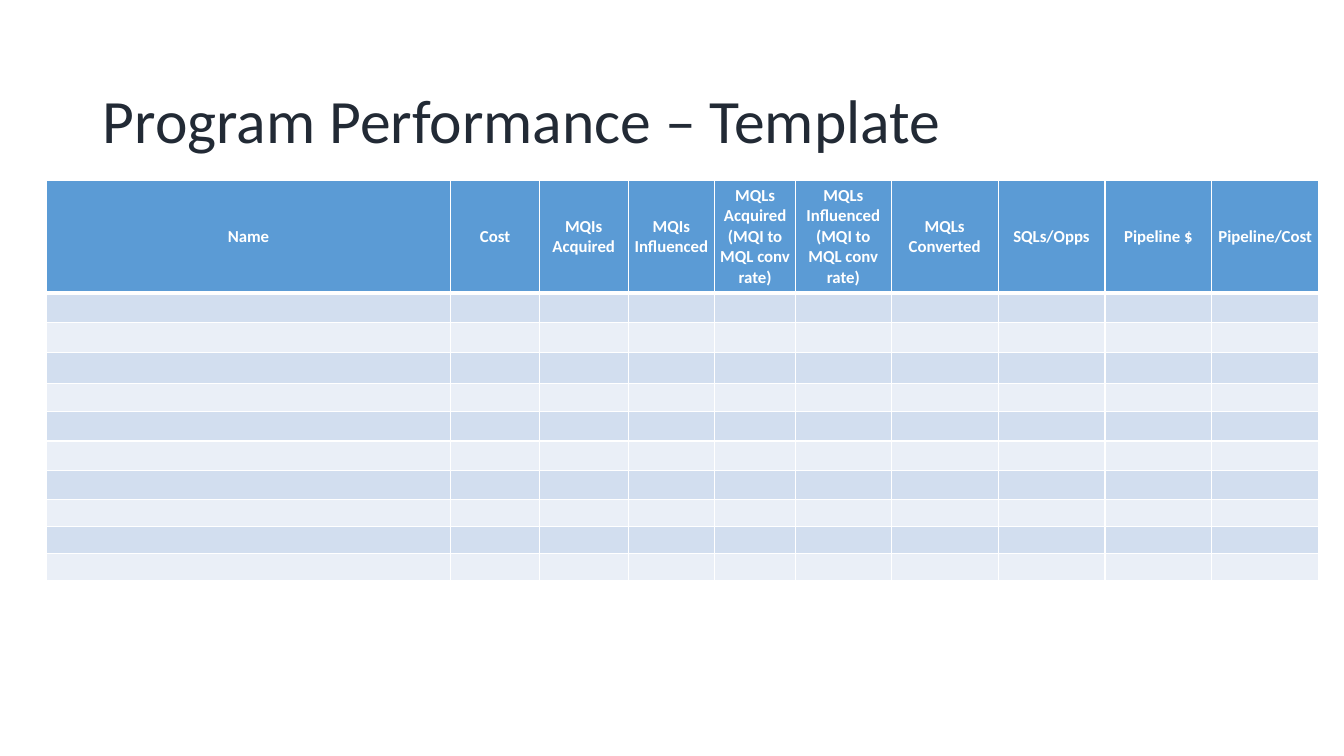
from lxml.etree import SubElement
from pptx import Presentation
from pptx.dml.color import RGBColor
from pptx.enum.text import MSO_ANCHOR as Anchor, MSO_AUTO_SIZE as Fit, PP_ALIGN as Align
from pptx.oxml.ns import qn
from pptx.util import Inches, Pt

# Content: heading and width of each column, in inches
TITLE = "Program Performance – Template"
COLS = [
    ("Name", 4.01),
    ("Cost", 0.88),
    ("MQIs Acquired", 0.88),
    ("MQIs Influenced", 0.86),
    ("MQLs Acquired (MQI to MQL conv rate)", 0.8),
    ("MQLs Influenced\n(MQI to MQL conv rate)", 0.95),
    ("MQLs Converted", 1.06),
    ("SQLs/Opps", 1.06),
    ("Pipeline $", 1.06),
    ("Pipeline/Cost", 1.06),
]
ROWS = [1.11, 0.29, 0.3, 0.31, 0.28, 0.29, 0.29, 0.29, 0.27, 0.27, 0.27]

# Format
FONT = "Calibri"
INK = RGBColor(0x22, 0x2A, 0x35)
WHITE = RGBColor(0xFF, 0xFF, 0xFF)
HEAD = RGBColor(0x5B, 0x9B, 0xD5)
BANDS = [RGBColor(0xEA, 0xEF, 0xF7), RGBColor(0xD2, 0xDE, 0xEF)]
TITLE_FONT = {"name": FONT, "size": Pt(44), "bold": False}
HEAD_FONT = {"name": FONT, "size": Pt(12), "bold": True}
PAD = Inches(0.05)
CELL = {"margin_left": PAD, "margin_right": PAD, "margin_top": PAD,
        "margin_bottom": PAD, "vertical_anchor": Anchor.MIDDLE}


def style(item, form):
    for key, val in form.items():
        setattr(item, key, val)


def write(frame, text, form, color, align):
    frame.text = text
    for para in frame.paragraphs:
        para.alignment = align
        for run in para.runs:
            style(run.font, form)
            run.font.color.rgb = color


def edge(cell, sides):
    props = cell._tc.get_or_add_tcPr()
    for side, width in sides.items():
        line = SubElement(props, qn("a:ln" + side), w=str(Pt(width)))
        fill = SubElement(line, qn("a:solidFill"))
        SubElement(fill, qn("a:srgbClr"), val=str(WHITE))


deck = Presentation()
deck.slide_width, deck.slide_height = Inches(13.33), Inches(7.5)
slide = deck.slides.add_slide(deck.slide_layouts[5])

# Title
title = slide.shapes.title
style(title, {"left": Inches(0.92), "top": Inches(0.64),
              "width": Inches(11.5), "height": Inches(1.18)})
frame = title.text_frame
style(frame, {"auto_size": Fit.NONE, "word_wrap": True,
              "vertical_anchor": Anchor.MIDDLE})
write(frame, TITLE, TITLE_FONT, INK, Align.LEFT)
frame.paragraphs[0].line_spacing = 0.9

# Table grid
wide = Inches(sum(width for _, width in COLS))
table = slide.shapes.add_table(len(ROWS), len(COLS), Inches(0.46), Inches(1.79),
                               wide, Inches(sum(ROWS))).table
for col, (_, width) in zip(table.columns, COLS):
    col.width = Inches(width)
for row, height in zip(table.rows, ROWS):
    row.height = Inches(height)

# Heading row and banded empty rows
for r, row in enumerate(table.rows):
    for cell, (text, _) in zip(row.cells, COLS):
        style(cell, CELL)
        edge(cell, {"L": 1, "R": 1, "T": 3 if r == 1 else 1, "B": 3 if r == 0 else 1})
        cell.fill.solid()
        cell.fill.fore_color.rgb = BANDS[r % 2] if r else HEAD
        if r == 0:
            write(cell.text_frame, text, HEAD_FONT, WHITE, Align.CENTER)
        else:
            para = cell.text_frame.paragraphs[0]
            SubElement(para._p, qn("a:endParaRPr"), sz="1000")

deck.save("out.pptx")
